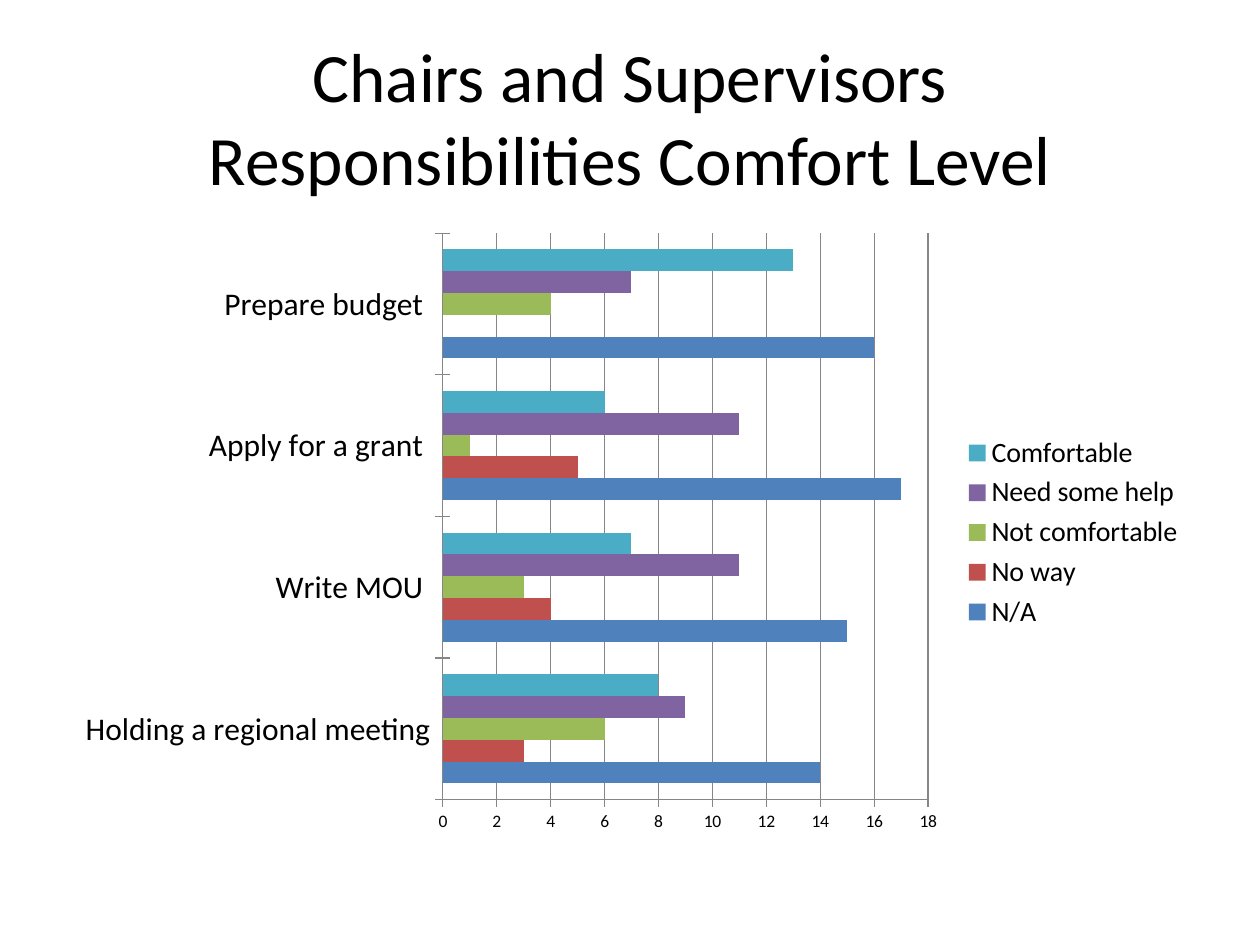
from pptx import Presentation
from pptx import util as u
from pptx.chart import data as chart_data
from pptx.dml import color
from pptx.enum import chart as ch, text

FONT = "Calibri"
BLACK, GREY = "000000", "868686"
TITLE = "Chairs and Supervisors\vResponsibilities Comfort Level"
TASKS = ["Holding a regional meeting", "Write MOU ", "Apply for a grant ", "Prepare budget "]
ANSWERS = [
    ("N/A", "4F81BD", (14, 15, 17, 16)),
    ("No way", "C0504D", (3, 4, 5, None)),
    ("Not comfortable", "9BBB59", (6, 3, 1, 4)),
    ("Need some help", "8064A2", (9, 11, 11, 7)),
    ("Comfortable", "4BACC6", (8, 7, 6, 13)),
]
LEFT, WIDTH = u.Cm(1.27), u.Cm(22.86)


def rgb(value):
    return color.RGBColor.from_string(value)


def apply(target, values):
    """Set each named attribute of target."""
    for name, value in values.items():
        setattr(target, name, value)


def style_font(font, size):
    apply(font, {"name": FONT, "size": u.Pt(size), "bold": False})
    font.color.rgb = rgb(BLACK)


def style_line(line):
    line.color.rgb = rgb(GREY)
    line.width = u.Pt(0.75)


def add_title(page):
    box = page.shapes.add_textbox(LEFT, u.Cm(0.76), WIDTH, u.Cm(3.18))
    apply(box.text_frame, {"word_wrap": True, "vertical_anchor": text.MSO_ANCHOR.MIDDLE})
    para = box.text_frame.paragraphs[0]
    apply(para, {"text": TITLE, "alignment": text.PP_ALIGN.CENTER})
    style_font(para.font, 39.6)
    for span in para.runs:
        style_font(span.font, 39.6)


def add_comfort_chart(page):
    data = chart_data.CategoryChartData()
    data.categories = TASKS
    for name, _, values in ANSWERS:
        data.add_series(name, values)
    chart = page.shapes.add_chart(
        ch.XL_CHART_TYPE.BAR_CLUSTERED, LEFT, u.Cm(4.45), WIDTH, u.Cm(12.57), data
    ).chart
    apply(chart, {"has_title": False, "has_legend": True})
    style_font(chart.font, 10)
    apply(chart.legend, {"position": ch.XL_LEGEND_POSITION.RIGHT, "include_in_layout": False})
    style_font(chart.legend.font, 16)

    plot = chart.plots[0]
    apply(plot, {"gap_width": 150, "overlap": 0, "vary_by_categories": False})
    for series, (_, fill, _) in zip(plot.series, ANSWERS):
        series.format.fill.solid()
        series.format.fill.fore_color.rgb = rgb(fill)

    for axis, size in ((chart.category_axis, 18), (chart.value_axis, 10)):
        axis.major_tick_mark = ch.XL_TICK_MARK.CROSS
        style_font(axis.tick_labels.font, size)
        style_line(axis.format.line)
    apply(chart.value_axis, {"minimum_scale": 0, "maximum_scale": 18, "major_unit": 2,
                             "has_major_gridlines": True})
    style_line(chart.value_axis.major_gridlines.format.line)


def main():
    deck = Presentation()
    apply(deck, {"slide_width": u.Cm(25.4), "slide_height": u.Cm(19.05)})
    page = deck.slides.add_slide(deck.slide_layouts[6])
    add_title(page)
    add_comfort_chart(page)
    deck.save("out.pptx")


if __name__ == "__main__":
    main()
